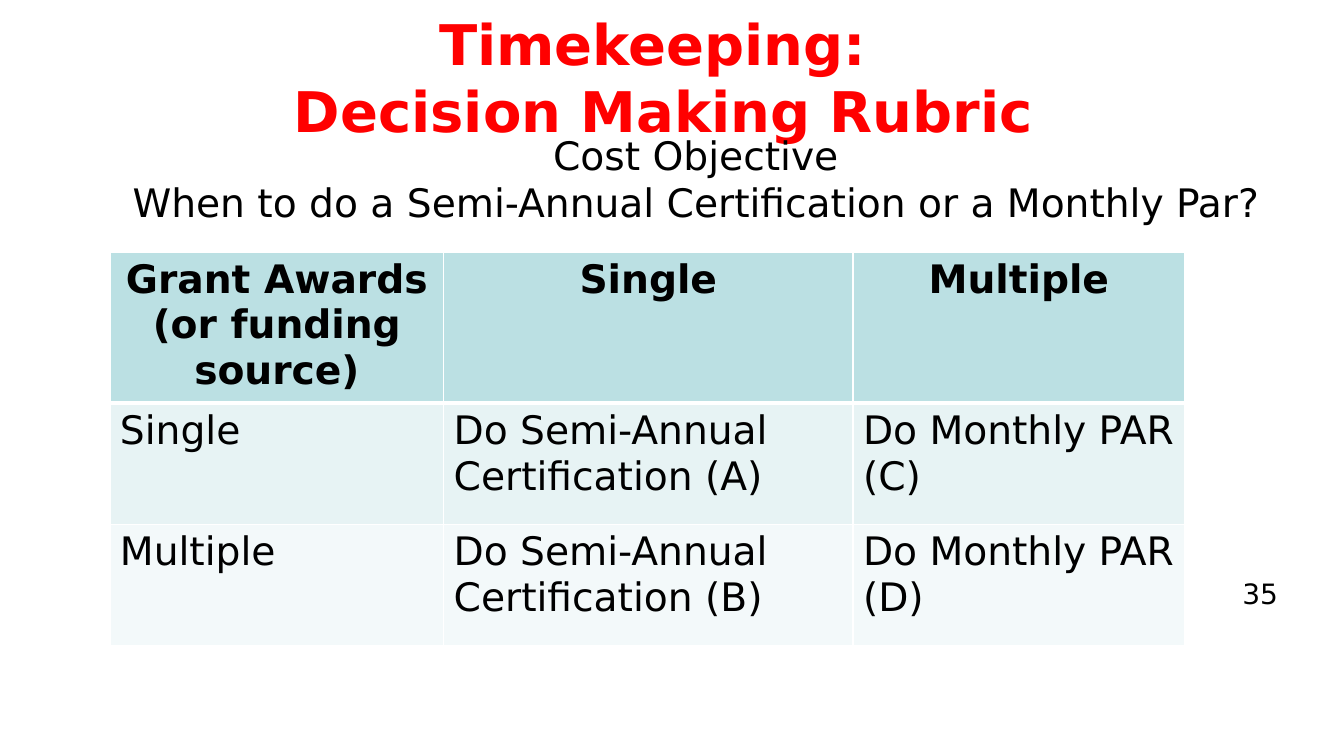
from lxml import etree
from pptx import Presentation
from pptx.dml.color import RGBColor
from pptx.enum.text import MSO_ANCHOR, MSO_AUTO_SIZE, PP_ALIGN
from pptx.oxml.ns import qn

PX = 9144  # 100 px to the inch
POINT = 12700
CENTER, LEFT = PP_ALIGN.CENTER, PP_ALIGN.LEFT
TOP = MSO_ANCHOR.TOP
NO_FIT = MSO_AUTO_SIZE.NONE
FONT = "DejaVu Sans"
COLORS = {
    "title": "FF0000",
    "text": "000000",
    "border": "FFFFFF",
    "header": "BBE0E3",
    "first row": "E7F3F4",
    "second row": "F3F9FA",
}


def write(frame, lines, size=28, color="text", bold=False, align=CENTER):
    """Put each line in its own paragraph of the text frame."""
    for index, line in enumerate(lines):
        para = frame.paragraphs[0] if index == 0 else frame.add_paragraph()
        para.text = line
        para.alignment = align
        for span in para.runs:
            span.font.name = FONT
            span.font.size = size * POINT
            span.font.bold = bold
            span.font.color.rgb = RGBColor.from_string(COLORS[color])


def add_border(cell, side, points):
    line = etree.SubElement(cell._tc.get_or_add_tcPr(), qn(f"a:{side}"), w=str(points * POINT))
    fill = etree.SubElement(line, qn("a:solidFill"))
    etree.SubElement(fill, qn("a:srgbClr"), val=COLORS["border"])


deck = Presentation()
deck.slide_width, deck.slide_height = 1333 * PX, 750 * PX
page = deck.slides.add_slide(deck.slide_layouts[5])

# Title
title = page.shapes.title
title.left, title.top, title.width, title.height = 0, 0, 1333 * PX, 125 * PX
frame = title.text_frame
frame.auto_size = NO_FIT
frame.vertical_anchor = TOP
frame.margin_top = 9 * PX
write(frame, ["Timekeeping:  \vDecision Making Rubric\t"], size=40, color="title", bold=True)

# Question and page number
question = page.shapes.add_textbox(109 * PX, 125 * PX, 1162 * PX, 151 * PX)
question.text_frame.word_wrap = False
write(question.text_frame, [
    "Cost Objective",
    "When to do a Semi-Annual Certification or a Monthly Par?",
])

number = page.shapes.add_textbox(1200 * PX, 567 * PX, 100 * PX, 44 * PX)
number.text_frame.word_wrap = True
write(number.text_frame, ["35"], size=20)

# Decision table
rows = [
    ("header", 149, ["Grant Awards (or funding source)", "Single", "Multiple"]),
    ("first row", 120, ["Single", "Do Semi-Annual Certification (A)", "Do Monthly PAR (C)"]),
    ("second row", 120, ["Multiple", "Do Semi-Annual Certification (B)", "Do Monthly PAR (D)"]),
]
widths = [331, 406, 329]
height = sum(row_height for _, row_height, _ in rows)
table = page.shapes.add_table(
    len(rows), len(widths), 109 * PX, 250 * PX, sum(widths) * PX, height * PX
).table
for column, width in zip(table.columns, widths):
    column.width = width * PX

for row_index, (kind, row_height, texts) in enumerate(rows):
    table.rows[row_index].height = row_height * PX
    is_header = kind == "header"
    borders = {
        "lnL": 1,
        "lnR": 1,
        "lnT": 3 if row_index == 1 else 1,
        "lnB": 3 if is_header else 1,
    }
    for column_index, text in enumerate(texts):
        cell = table.cell(row_index, column_index)
        for side, points in borders.items():
            add_border(cell, side, points)
        cell.fill.solid()
        cell.fill.fore_color.rgb = RGBColor.from_string(COLORS[kind])
        write(cell.text_frame, [text], bold=is_header, align=CENTER if is_header else LEFT)

deck.save("out.pptx")
